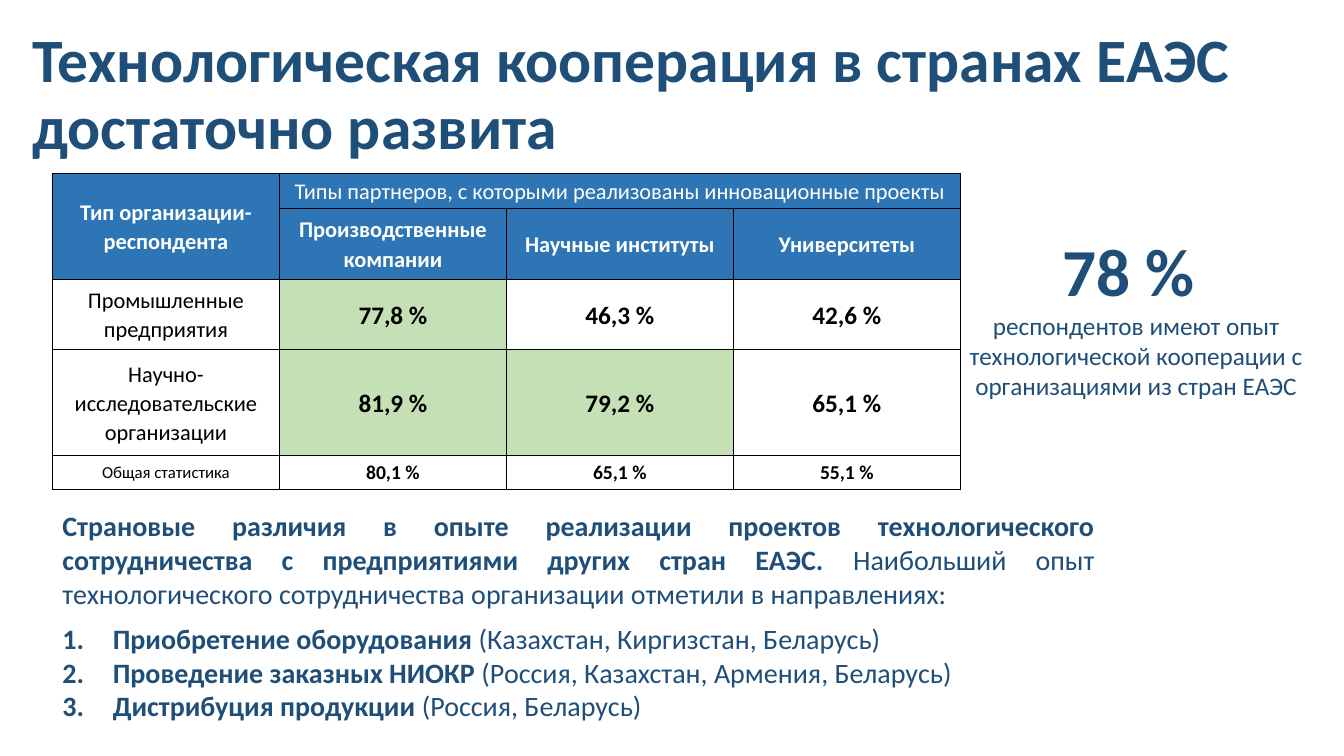
from dataclasses import dataclass

from lxml import etree
from pptx import Presentation
from pptx.dml.color import RGBColor
from pptx.enum.shapes import MSO_SHAPE
from pptx.enum.text import MSO_ANCHOR as Anchor, PP_ALIGN as Align
from pptx.oxml.ns import qn
from pptx.util import Pt


@dataclass(frozen=True)
class Theme:
    font: str = "Calibri"
    navy: str = "1F4E79"
    header: str = "2E75B6"
    strong: str = "C5E0B4"
    white: str = "FFFFFF"
    black: str = "000000"
    title: int = 44
    figure: int = 48
    body: int = 20
    value: int = 18
    label: int = 16
    total: int = 14
    small: int = 12


T = Theme()
COLUMNS = ["Производственные компании", "Научные институты", "Университеты"]
# label, values, number of highlighted values, label size, value size
ROWS = [
    ("Промышленные предприятия", ["77,8 %", "46,3 %", "42,6 %"], 1, T.label, T.value),
    ("Научно-исследовательские организации", ["81,9 %", "79,2 %", "65,1 %"], 2, T.label, T.value),
    ("Общая статистика", ["80,1 %", "65,1 %", "55,1 %"], 0, T.small, T.total),
]
ROW_HEIGHTS = [25, 50.5, 50.5, 75.5, 24]
DIRECTIONS = [
    ("Приобретение оборудования ", "(Казахстан, Киргизстан, Беларусь)"),
    ("Проведение заказных НИОКР ", "(Россия, Казахстан, Армения, Беларусь)"),
    ("Дистрибуция продукции ", "(Россия, Беларусь)"),
]


def add_text(p, text, size=T.body, color=T.navy, bold=False):
    r = p.add_run()
    r.text = text
    r.font.name = T.font
    r.font.size = Pt(size)
    r.font.bold = bold
    r.font.color.rgb = RGBColor.from_string(color)


def add_box(s, box):
    tf = s.shapes.add_textbox(*map(Pt, box)).text_frame
    tf.word_wrap = True
    return tf


def set_title(s, box, text):
    title = s.shapes.title
    title.left, title.top, title.width, title.height = map(Pt, box)
    tf = title.text_frame
    tf.word_wrap = True
    tf.vertical_anchor = Anchor.MIDDLE
    p = tf.paragraphs[0]
    p.alignment = Align.LEFT
    p.line_spacing = 0.9
    add_text(p, text, size=T.title, bold=True)


def set_borders(cell):
    tcPr = cell._tc.get_or_add_tcPr()
    for i, side in enumerate(("lnL", "lnR", "lnT", "lnB")):
        ln = etree.Element(qn(f"a:{side}"), w=str(Pt(1)))
        fill = etree.SubElement(ln, qn("a:solidFill"))
        etree.SubElement(fill, qn("a:srgbClr"), val=T.black)
        tcPr.insert(i, ln)


def fill_cell(cell, text, fill=T.white, **font):
    cell.fill.solid()
    cell.fill.fore_color.rgb = RGBColor.from_string(fill)
    cell.vertical_anchor = Anchor.MIDDLE
    cell.margin_left = cell.margin_right = Pt(5)
    cell.margin_top = cell.margin_bottom = 0
    p = cell.text_frame.paragraphs[0]
    p.alignment = Align.CENTER
    p.line_spacing = 1.07
    add_text(p, text, **font)


def add_partner_table(s, box):
    table = s.shapes.add_table(len(ROW_HEIGHTS), len(COLUMNS) + 1, *map(Pt, box)).table
    table.first_row = table.horz_banding = False
    for column in table.columns:
        column.width = Pt(box[2] / len(table.columns))
    for row, height in zip(table.rows, ROW_HEIGHTS):
        row.height = Pt(height)
    for cell in table.iter_cells():
        set_borders(cell)

    head = dict(fill=T.header, size=T.label, color=T.white)
    table.cell(0, 0).merge(table.cell(1, 0))
    table.cell(0, 1).merge(table.cell(0, len(COLUMNS)))
    fill_cell(table.cell(0, 0), "Тип организации-респондента", bold=True, **head)
    fill_cell(table.cell(0, 1), "Типы партнеров, с которыми реализованы инновационные проекты", **head)
    for c, name in enumerate(COLUMNS, 1):
        fill_cell(table.cell(1, c), name, bold=True, **head)

    for r, (label, values, strong, label_size, value_size) in enumerate(ROWS, 2):
        fill_cell(table.cell(r, 0), label, size=label_size, color=T.black)
        for c, value in enumerate(values, 1):
            fill_cell(table.cell(r, c), value, fill=T.strong if c <= strong else T.white,
                      size=value_size, color=T.black, bold=True)


def add_key_figure(s, box):
    sp = s.shapes.add_shape(MSO_SHAPE.RECTANGLE, *map(Pt, box))
    sp.shadow.inherit = False
    sp.fill.solid()
    sp.fill.fore_color.rgb = RGBColor.from_string(T.white)
    sp.line.fill.background()
    tf = sp.text_frame
    tf.word_wrap = True
    tf.vertical_anchor = Anchor.TOP
    p = tf.paragraphs[0]
    p.alignment = Align.CENTER
    add_text(p, "78 % ", size=T.figure, bold=True)
    p.add_line_break()
    add_text(p, "респондентов имеют опыт технологической кооперации "
                "с организациями из стран ЕАЭС", size=T.value)


def add_summary(s, box):
    p = add_box(s, box).paragraphs[0]
    p.alignment = Align.JUSTIFY
    add_text(p, "Страновые различия в опыте реализации проектов технологического "
                "сотрудничества с предприятиями других стран ЕАЭС. ", bold=True)
    add_text(p, "Наибольший опыт технологического сотрудничества организации "
                "отметили в направлениях: ")


def add_directions(s, box):
    tf = add_box(s, box)
    for i, (name, countries) in enumerate(DIRECTIONS):
        p = tf.add_paragraph() if i else tf.paragraphs[0]
        pPr = p._p.get_or_add_pPr()
        pPr.set("marL", str(Pt(36)))
        pPr.set("indent", str(-Pt(36)))
        etree.SubElement(pPr, qn("a:buFont"), typeface="+mj-lt")
        etree.SubElement(pPr, qn("a:buAutoNum"), type="arabicPeriod")
        add_text(p, name, bold=True)
        add_text(p, countries)


def main():
    prs = Presentation()
    prs.slide_width, prs.slide_height = Pt(960), Pt(540)
    s = prs.slides.add_slide(prs.slide_layouts[5])
    set_title(s, (16, 24.5, 944, 88), "Технологическая кооперация в странах ЕАЭС достаточно развита")
    add_summary(s, (37.5, 360, 751.5, 80))
    add_directions(s, (37.5, 440.5, 776, 80))
    add_key_figure(s, (685.5, 160.5, 252, 131))
    add_partner_table(s, (37.5, 124, 648.5, sum(ROW_HEIGHTS)))
    prs.save("out.pptx")


if __name__ == "__main__":
    main()
